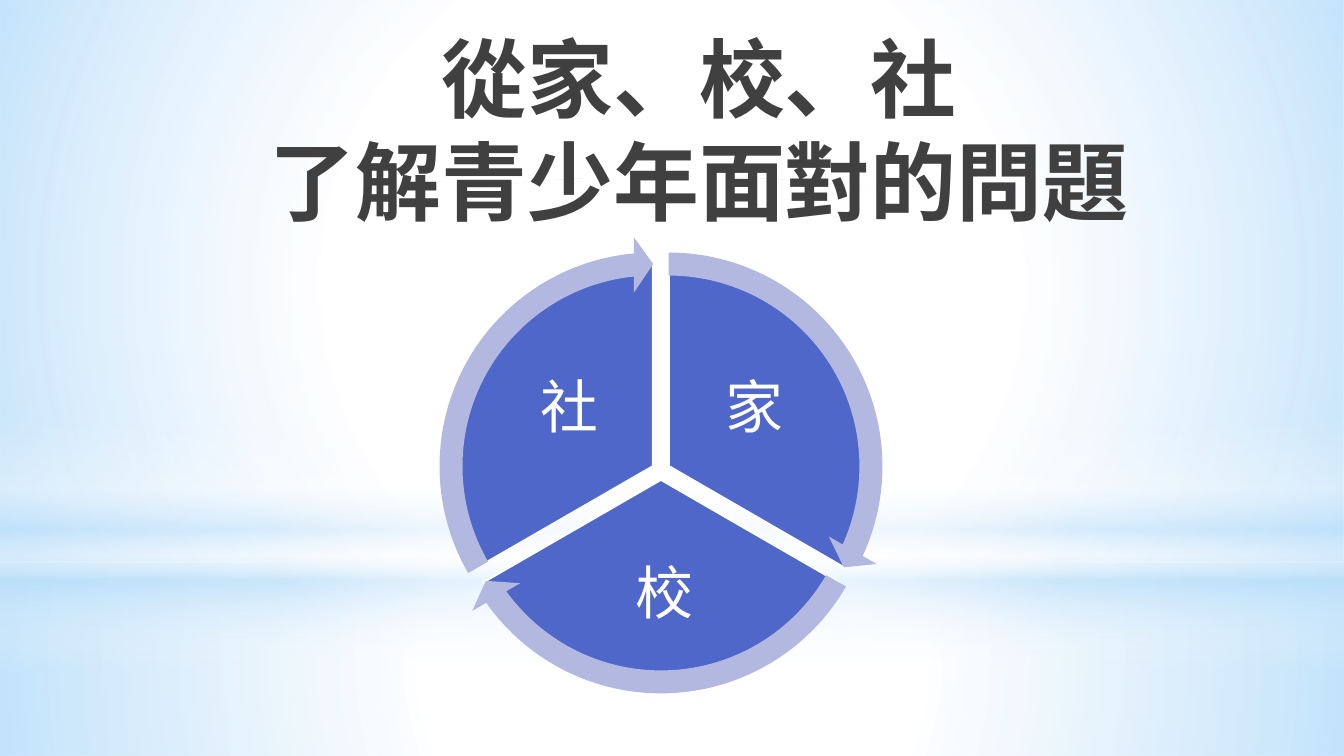
"""Builds a slide with a three-part cycle of home, school and society."""
from dataclasses import dataclass
from math import cos, radians, sin

from lxml import etree
from pptx import Presentation
from pptx.dml.color import RGBColor
from pptx.enum.shapes import MSO_SHAPE
from pptx.enum.text import MSO_ANCHOR, PP_ALIGN
from pptx.oxml.ns import qn
from pptx.util import Pt

RECTANGLE = MSO_SHAPE.RECTANGLE
OVAL = MSO_SHAPE.OVAL
PIE = MSO_SHAPE.PIE
CIRCULAR_ARROW = MSO_SHAPE.CIRCULAR_ARROW
TOP = MSO_ANCHOR.TOP
MIDDLE = MSO_ANCHOR.MIDDLE
CENTER = PP_ALIGN.CENTER


@dataclass(frozen=True)
class Theme:
    """Holds the colours, font and type sizes."""
    font: str = "Cabin"
    title_size: int = 46
    label_size: int = 31
    title: str = "404040"
    white: str = "FFFFFF"
    sky: str = "B4DCFA"
    sector: str = "4E67C8"
    arrow: str = "B2B8E0"


THEME = Theme()
WIDTH, HEIGHT = 720, 405
HORIZON = 301.5
HUB_X, HUB_Y, HUB_GAP = 354.1, 252.2, 4.8
PIE_RADIUS, ARROW_RADIUS = 109.5, 123.1
ARROW_THICKNESS, ARROW_HEAD_ANGLE, ARROW_HEAD_WIDTH = 0.05, 3.28, 0.06
ADJUSTMENT_PER_DEGREE = 0.6

BACKDROP = [
    (RECTANGLE, (0, HORIZON, WIDTH, HEIGHT - HORIZON), "circle",
     [(0, THEME.white, 91), (37, THEME.white, 76), (100, THEME.sky, 79)]),
    (RECTANGLE, (0, 0, WIDTH, HORIZON), "circle",
     [(0, THEME.white, 89), (48, THEME.white, 62), (100, THEME.sky, 79)]),
    (RECTANGLE, (0, 222.5, WIDTH, 135.5), "linear",
     [(0, THEME.white, 0), (29, THEME.white, 30), (45, THEME.sky, 40),
      (55, THEME.white, 26), (65, THEME.sky, 60), (100, THEME.white, 0)]),
    (OVAL, (0, 94.5, WIDTH, HORIZON), "circle",
     [(0, THEME.white, 100), (56, THEME.white, 0)]),
]
SECTORS = [
    ("家", 270, (365, 186.5, 78.5, 65.5)),
    ("校", 30, (297.4, 290.2, 117.4, 57.6)),
    ("社", 150, (265.7, 186.5, 78.5, 65.5)),
]


def add_shape(slide, kind, box):
    """Add a preset shape without shadow or outline."""
    shape = slide.shapes.add_shape(kind, *map(Pt, box))
    shape.shadow.inherit = False
    shape.line.fill.background()
    return shape


def fill_solid(shape, color):
    """Fill a shape with one colour."""
    shape.fill.solid()
    shape.fill.fore_color.rgb = RGBColor.from_string(color)


def fill_gradient(shape, style, stops):
    """Fill a shape with a circular or downward gradient of translucent stops."""
    shape.fill.gradient()
    gradient = shape._element.spPr.find(qn("a:gradFill"))
    gradient.clear()
    stop_list = etree.SubElement(gradient, qn("a:gsLst"))
    for position, color, opacity in stops:
        stop = etree.SubElement(stop_list, qn("a:gs"), pos=str(position * 1000))
        tint = etree.SubElement(stop, qn("a:srgbClr"), val=color)
        etree.SubElement(tint, qn("a:alpha"), val=str(opacity * 1000))
    if style == "circle":
        focus = etree.SubElement(gradient, qn("a:path"), path="circle")
        sides = dict.fromkeys("ltrb", "50000")
        etree.SubElement(focus, qn("a:fillToRect"), **sides)
    else:
        etree.SubElement(gradient, qn("a:lin"), ang="5400000", scaled="0")


def add_text(slide, box, lines, size, color, bold, anchor, margins, spacing):
    """Add a centred text box whose lines share one paragraph."""
    frame = slide.shapes.add_textbox(*map(Pt, box)).text_frame
    frame.word_wrap = True
    frame.vertical_anchor = anchor
    frame.margin_left = frame.margin_right = Pt(margins[0])
    frame.margin_top = frame.margin_bottom = Pt(margins[1])
    paragraph = frame.paragraphs[0]
    paragraph.alignment = CENTER
    paragraph.line_spacing = spacing
    for index, line in enumerate(lines):
        if index:
            paragraph.add_line_break()
        run = paragraph.add_run()
        run.text = line
        run.font.size = Pt(size)
        run.font.bold = bold
        run.font.name = THEME.font
        run.font.color.rgb = RGBColor.from_string(color)
        etree.SubElement(run.font._element, qn("a:ea"), typeface=THEME.font)


def sector_box(start, radius):
    """Return the square around a circle pushed out along its sector."""
    middle = radians(start + 60)
    left = HUB_X + HUB_GAP * cos(middle) - radius
    top = HUB_Y + HUB_GAP * sin(middle) - radius
    return left, top, 2 * radius, 2 * radius


def set_adjustments(shape, values):
    """Set the adjustments of a shape in order."""
    for index, value in enumerate(values):
        shape.adjustments[index] = value


def sector_angles(start):
    """Return the start and end of a sector as adjustment values."""
    end = (start + 120) % 360
    return start * ADJUSTMENT_PER_DEGREE, end * ADJUSTMENT_PER_DEGREE


def add_sector(slide, label, start, label_box):
    """Add one labelled third of the circle."""
    shape = add_shape(slide, PIE, sector_box(start, PIE_RADIUS))
    set_adjustments(shape, sector_angles(start))
    fill_solid(shape, THEME.sector)
    shape.line.color.rgb = RGBColor.from_string(THEME.white)
    shape.line.width = Pt(1.25)
    add_text(slide, label_box, [label], THEME.label_size, THEME.white,
             False, MIDDLE, (3, 3), 0.9)


def add_cycle_arrow(slide, start):
    """Add the curved arrow around one sector."""
    shape = add_shape(slide, CIRCULAR_ARROW, sector_box(start, ARROW_RADIUS))
    first, last = sector_angles(start)
    set_adjustments(shape, (ARROW_THICKNESS, ARROW_HEAD_ANGLE,
                            last - ARROW_HEAD_ANGLE, first, ARROW_HEAD_WIDTH))
    fill_solid(shape, THEME.arrow)


def main():
    """Build and save the slide."""
    presentation = Presentation()
    presentation.slide_width, presentation.slide_height = Pt(WIDTH), Pt(HEIGHT)
    slide = presentation.slides.add_slide(presentation.slide_layouts[6])
    fill_solid(slide.background, THEME.white)
    for kind, box, style, stops in BACKDROP:
        fill_gradient(add_shape(slide, kind, box), style, stops)
    add_text(slide, (65.5, 10, 617.8, 67.7), ["從家、校、社", "了解青少年面對的問題"],
             THEME.title_size, THEME.title, True, TOP, (7.2, 3.6), 1.0)
    for label, start, label_box in SECTORS:
        add_sector(slide, label, start, label_box)
    for _, start, _ in SECTORS:
        add_cycle_arrow(slide, start)
    presentation.save("out.pptx")


if __name__ == "__main__":
    main()
